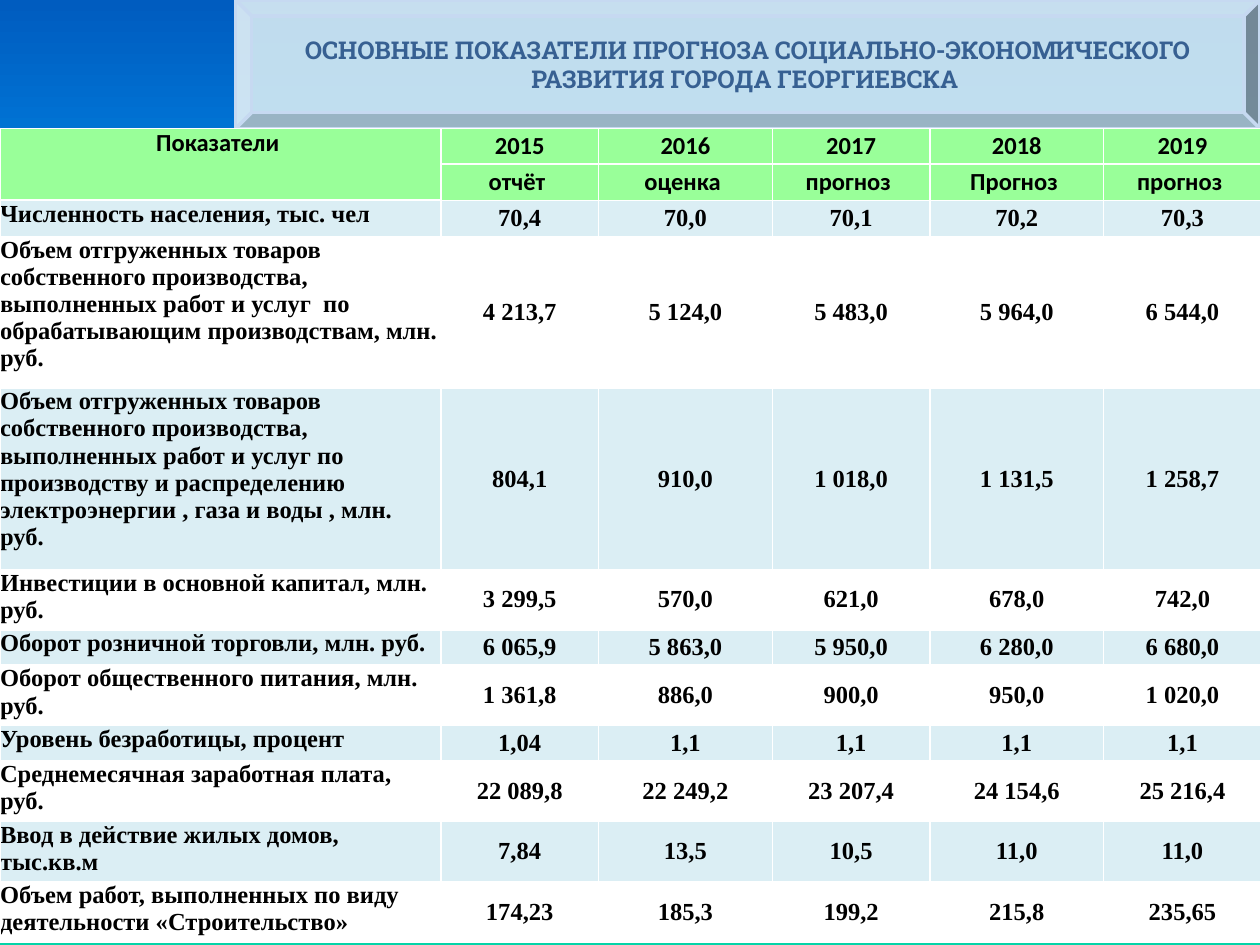
import dataclasses

import pptx
import pptx.dml.color
import pptx.enum.shapes
import pptx.enum.text
import pptx.oxml
import pptx.oxml.ns
import pptx.util

ALIGN = pptx.enum.text.PP_ALIGN
ANCHOR = pptx.enum.text.MSO_ANCHOR
WIDTH, HEIGHT = 10, 7.5
HEADER_HEIGHT = 1.02
HEADER_ROWS = 2
COLUMN_WIDTHS = (3.5, 1.25, 1.38, 1.25, 1.38, 1.25)
ROW_HEIGHTS = (0.28, 0.29, 0.29, 1.2, 1.44, 0.48, 0.28, 0.48, 0.28, 0.48, 0.48, 0.48)
# Rows whose lower border is thicker
HEAVY_ROWS = {0, 2, 6, 10}

TITLE = "ОСНОВНЫЕ ПОКАЗАТЕЛИ ПРОГНОЗА СОЦИАЛЬНО-ЭКОНОМИЧЕСКОГО РАЗВИТИЯ ГОРОДА ГЕОРГИЕВСКА "
INDICATORS = (
    ("Показатели ", "2015", "2016", "2017", "2018", "2019"),
    ("", "отчёт ", "оценка ", "прогноз ", "Прогноз ", "прогноз "),
    ("Численность населения, тыс. чел", "70,4", "70,0", "70,1", "70,2", "70,3"),
    ("Объем отгруженных товаров собственного производства, выполненных работ и услуг  по "
     "обрабатывающим производствам, млн. руб.",
     "4 213,7", "5 124,0", "5 483,0", "5 964,0", "6 544,0"),
    ("Объем отгруженных товаров собственного производства, выполненных работ и услуг по "
     "производству и распределению электроэнергии , газа и воды , млн. руб.",
     "804,1", "910,0", "1 018,0", "1 131,5", "1 258,7"),
    ("Инвестиции в основной капитал, млн. руб.", "3 299,5", "570,0", "621,0", "678,0", "742,0"),
    ("Оборот розничной торговли, млн. руб.",
     "6 065,9", "5 863,0", "5 950,0", "6 280,0", "6 680,0"),
    ("Оборот общественного питания, млн. руб.", "1 361,8", "886,0", "900,0", "950,0", "1 020,0"),
    ("Уровень безработицы, процент", "1,04", "1,1", "1,1", "1,1", "1,1"),
    ("Среднемесячная заработная плата, руб.",
     "22 089,8", "22 249,2", "23 207,4", "24 154,6", "25 216,4"),
    ("Ввод в действие жилых домов, тыс.кв.м", "7,84", "13,5", "10,5", "11,0", "11,0"),
    ("Объем работ, выполненных по виду деятельности «Строительство»",
     "174,23", "185,3", "199,2", "215,8", "235,65"),
)


@dataclasses.dataclass(frozen=True)
class Theme:
    sky: tuple = ((0, "03D4A8"), (25, "21D6E0"), (75, "0087E6"), (100, "005CBF"))
    banner: str = "DBEEF4"
    banner_alpha: int = 88
    banner_line: str = "C6D9F1"
    title: str = "376092"
    ink: str = "000000"
    header: str = "99FF99"
    bands: tuple = ("DBEEF4", "FFFFFF")
    border: str = "FFFFFF"
    thin: float = 1
    thick: float = 1.5
    text_size: int = 14
    title_font: str = "Roboto Slab"
    header_font: str = "Calibri"
    body_font: str = "Times New Roman"


THEME = Theme()


def rgb(color):
    return pptx.dml.color.RGBColor.from_string(color)


def element(xml):
    """Parse one drawing element, declaring the a: prefix on its tag."""
    tag, rest = xml.split(" ", 1)
    return pptx.oxml.parse_xml(f'{tag} {pptx.oxml.ns.nsdecls("a")} {rest}')


def write(frame, text, font_name, color, align):
    frame.text = text
    para = frame.paragraphs[0]
    para.alignment = align
    for span in para.runs:
        span.font.name = font_name
        span.font.size = pptx.util.Pt(THEME.text_size)
        span.font.bold = True
        span.font.color.rgb = rgb(color)


def paint_background(page):
    fill = page.background.fill
    fill.gradient()
    fill.gradient_angle = 90
    stops = page.background._cSld.find(".//" + pptx.oxml.ns.qn("a:gsLst"))
    for stop in list(stops):
        stops.remove(stop)
    for share, color in THEME.sky:
        stops.append(element(f'<a:gs pos="{share * 1000}"><a:srgbClr val="{color}"/></a:gs>'))


def add_banner(page):
    left = 1.87
    banner = page.shapes.add_shape(
        pptx.enum.shapes.MSO_SHAPE.BEVEL, pptx.util.Inches(left), 0,
        pptx.util.Inches(WIDTH - left), pptx.util.Inches(HEADER_HEIGHT))
    banner.shadow.inherit = False
    banner.fill.solid()
    banner.fill.fore_color.rgb = rgb(THEME.banner)
    color = banner._element.spPr.find(".//" + pptx.oxml.ns.qn("a:srgbClr"))
    color.append(element(f'<a:alpha val="{THEME.banner_alpha * 1000}"/>'))
    banner.line.color.rgb = rgb(THEME.banner_line)
    banner.line.width = pptx.util.Pt(2)
    banner.text_frame.word_wrap = True
    banner.text_frame.vertical_anchor = ANCHOR.MIDDLE
    write(banner.text_frame, TITLE, THEME.title_font, THEME.title, ALIGN.CENTER)


def set_borders(cell, row):
    widths = {"L": THEME.thin, "R": THEME.thin,
              "T": THEME.thick if row - 1 in HEAVY_ROWS else THEME.thin,
              "B": THEME.thick if row in HEAVY_ROWS else THEME.thin}
    properties = cell._tc.get_or_add_tcPr()
    for place, (side, width) in enumerate(widths.items()):
        properties.insert(place, element(
            f'<a:ln{side} w="{pptx.util.Pt(width)}"><a:solidFill>'
            f'<a:srgbClr val="{THEME.border}"/></a:solidFill></a:ln{side}>'))


def fill_cell(cell, row, column, text):
    is_header = row < HEADER_ROWS
    cell.margin_left = cell.margin_right = cell.margin_top = cell.margin_bottom = 0
    cell.vertical_anchor = ANCHOR.MIDDLE if column else ANCHOR.TOP
    cell.fill.solid()
    cell.fill.fore_color.rgb = rgb(THEME.header if is_header else THEME.bands[row % 2])
    set_borders(cell, row)
    if text:
        write(cell.text_frame, text, THEME.header_font if is_header else THEME.body_font,
              THEME.ink, ALIGN.CENTER if is_header or column else ALIGN.LEFT)


def add_indicator_table(page):
    table = page.shapes.add_table(
        len(ROW_HEIGHTS), len(COLUMN_WIDTHS), 0, pptx.util.Inches(HEADER_HEIGHT),
        pptx.util.Inches(WIDTH), pptx.util.Inches(HEIGHT - HEADER_HEIGHT)).table
    table.first_row = table.horz_banding = False
    for column, width in zip(table.columns, COLUMN_WIDTHS):
        column.width = pptx.util.Inches(width)
    for row, height in zip(table.rows, ROW_HEIGHTS):
        row.height = pptx.util.Inches(height)
    for row, texts in enumerate(INDICATORS):
        for column, text in enumerate(texts):
            fill_cell(table.cell(row, column), row, column, text)
    # The heading of the first column spans both header rows
    table.cell(0, 0).merge(table.cell(HEADER_ROWS - 1, 0))


def main():
    deck = pptx.Presentation()
    deck.slide_width = pptx.util.Inches(WIDTH)
    deck.slide_height = pptx.util.Inches(HEIGHT)
    page = deck.slides.add_slide(deck.slide_layouts[6])
    paint_background(page)
    add_banner(page)
    add_indicator_table(page)
    deck.save("out.pptx")


if __name__ == "__main__":
    main()
